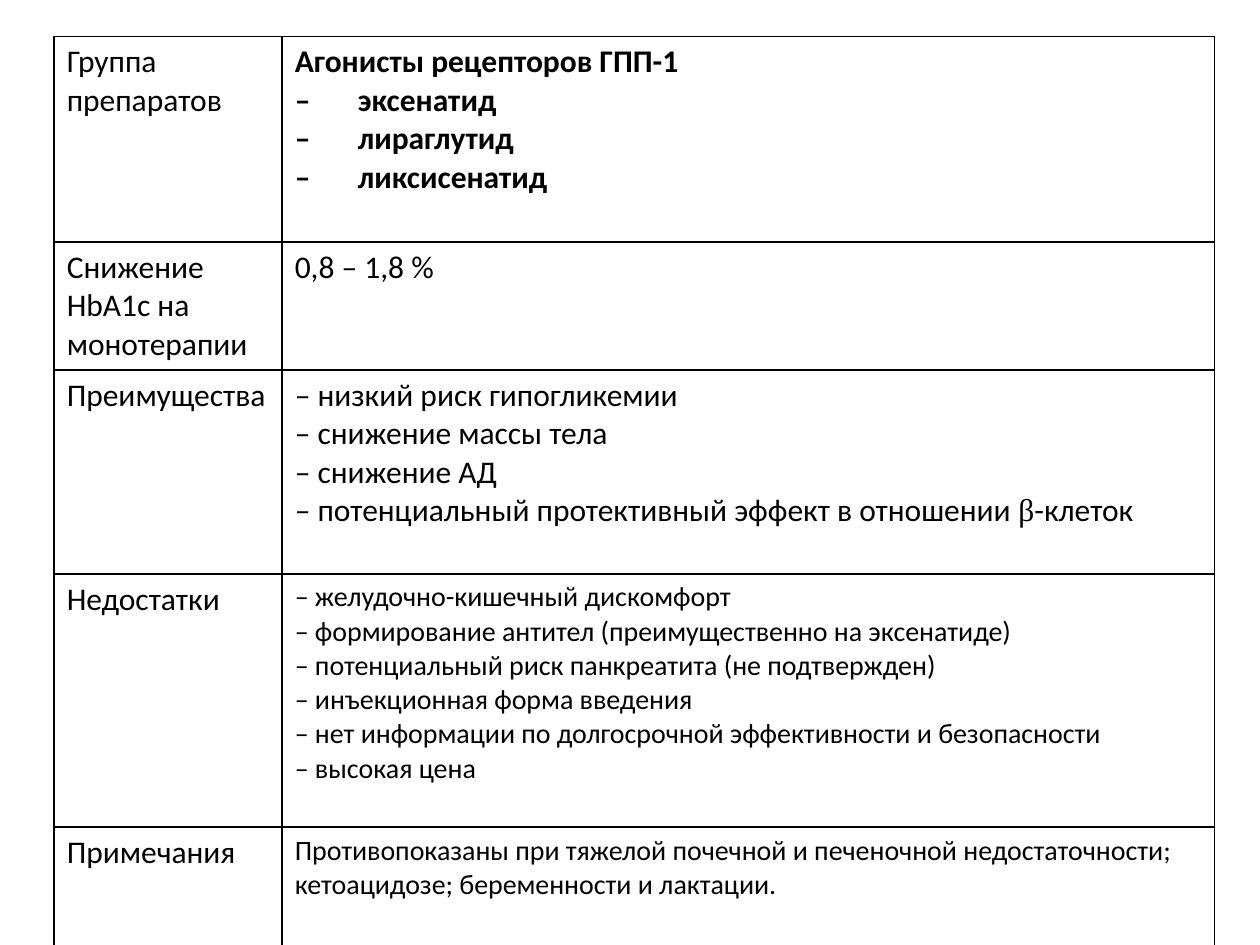
from dataclasses import dataclass

from lxml.etree import SubElement
from pptx import Presentation
from pptx.dml.color import RGBColor
from pptx.oxml.ns import qn
from pptx.table import Table, _Cell
from pptx.util import Inches, Pt

BLACK = RGBColor(0, 0, 0)
WHITE = RGBColor(255, 255, 255)
FONT, GREEK = "Calibri", "Times New Roman"
WIDTHS = (1.81, 7.4)


@dataclass
class Row:
    label: str
    lines: tuple[str, ...]
    height: float
    size: int = 18
    bold: bool = False


ROWS = (
    Row("Группа препаратов",
        ("Агонисты рецепторов ГПП-1", "–\tэксенатид", "–\tлираглутид", "–\tликсисенатид"),
        1.63, bold=True),
    Row("Снижение HbA1c на монотерапии", ("0,8 – 1,8 %",), 1.01),
    Row("Преимущества",
        ("– низкий риск гипогликемии", "– снижение массы тела", "– снижение АД",
         "– потенциальный протективный эффект в отношении β-клеток"),
        1.62),
    Row("Недостатки",
        ("– желудочно-кишечный дискомфорт",
         "– формирование антител (преимущественно на эксенатиде)",
         "– потенциальный риск панкреатита (не подтвержден)",
         "– инъекционная форма введения",
         "– нет информации по долгосрочной эффективности и безопасности",
         "– высокая цена"),
        2.01, size=16),
    Row("Примечания",
        ("Противопоказаны при тяжелой почечной и печеночной недостаточности; "
         "кетоацидозе; беременности и лактации.",),
        1.02, size=16),
)


def frame(cell: _Cell) -> None:
    """Give the cell black 1 pt borders and a white fill."""
    props = cell._tc.get_or_add_tcPr()
    for side in ("lnL", "lnR", "lnT", "lnB"):
        line = SubElement(props, qn(f"a:{side}"), w=str(Pt(1)))
        fill = SubElement(line, qn("a:solidFill"))
        SubElement(fill, qn("a:srgbClr"), val=str(BLACK))
    cell.fill.solid()
    cell.fill.fore_color.rgb = WHITE


def write(cell: _Cell, lines: tuple[str, ...], size: int, bold: bool) -> None:
    """Fill the cell with one paragraph a line, the Greek letter in its own font."""
    for i, line in enumerate(lines):
        para = cell.text_frame.paragraphs[0] if i == 0 else cell.text_frame.add_paragraph()
        for part in line.partition("β"):
            if not part:
                continue
            run = para.add_run()
            run.text = part
            look = {"name": GREEK if part == "β" else FONT, "size": Pt(size), "bold": bold}
            for key, value in look.items():
                setattr(run.font, key, value)
            run.font.color.rgb = BLACK


def fill_row(table: Table, i: int, row: Row) -> None:
    table.rows[i].height = Inches(row.height)
    label, body = table.cell(i, 0), table.cell(i, 1)
    for cell in (label, body):
        frame(cell)
    write(label, (row.label,), 18, False)
    write(body, row.lines, row.size, row.bold)


def main() -> None:
    deck = Presentation()
    deck.slide_width, deck.slide_height = Inches(10), Inches(7.5)
    slide = deck.slides.add_slide(deck.slide_layouts[6])
    height = sum(row.height for row in ROWS)
    table = slide.shapes.add_table(
        len(ROWS), len(WIDTHS), Inches(0.43), Inches(0.29),
        Inches(sum(WIDTHS)), Inches(height)).table
    table.first_row = table.horz_banding = False
    for col, width in zip(table.columns, WIDTHS):
        col.width = Inches(width)
    for i, row in enumerate(ROWS):
        fill_row(table, i, row)
    deck.save("out.pptx")


if __name__ == "__main__":
    main()
